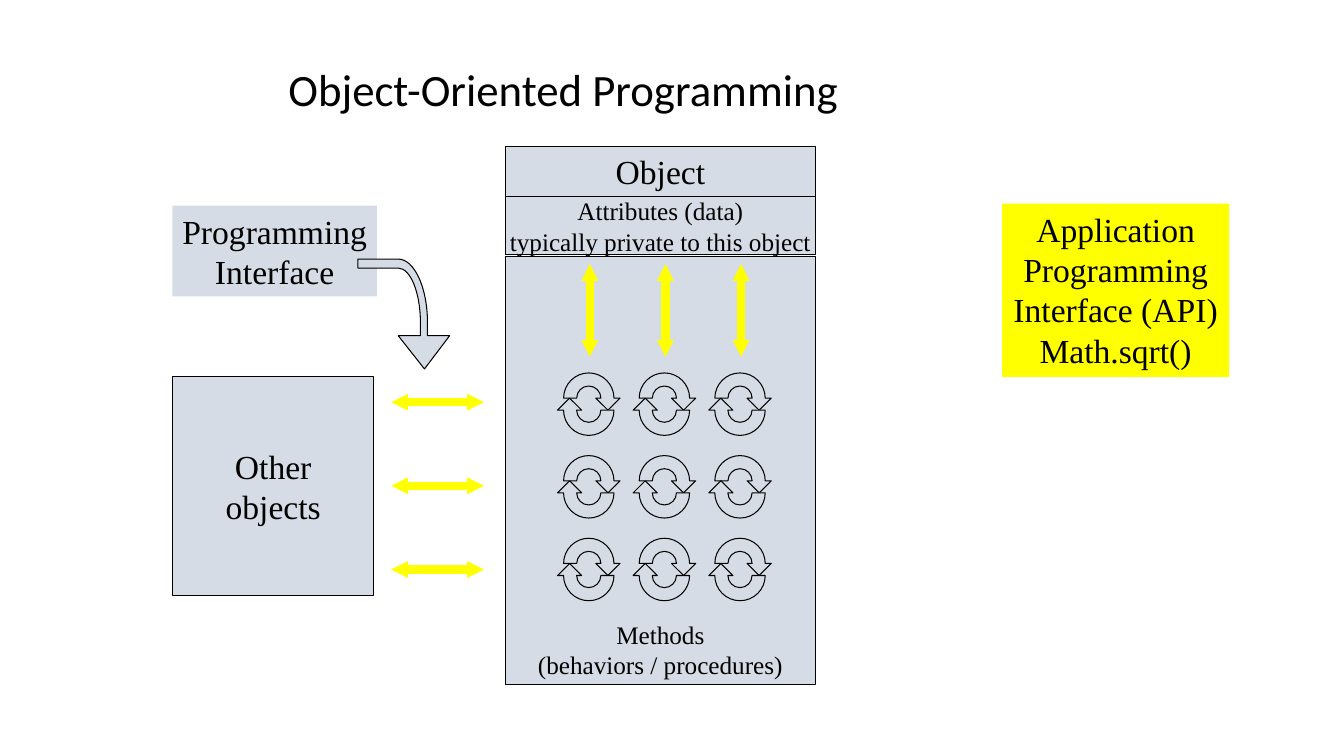
import math

from lxml import etree
from pptx import Presentation
from pptx.dml.color import RGBColor
from pptx.enum.shapes import MSO_CONNECTOR, MSO_SHAPE
from pptx.enum.text import MSO_ANCHOR, MSO_AUTO_SIZE, PP_ALIGN
from pptx.oxml.ns import qn
from pptx.util import Pt

RECT = MSO_SHAPE.RECTANGLE
STRAIGHT = MSO_CONNECTOR.STRAIGHT
TOP, MIDDLE, BOTTOM = MSO_ANCHOR.TOP, MSO_ANCHOR.MIDDLE, MSO_ANCHOR.BOTTOM
LEFT, CENTER = PP_ALIGN.LEFT, PP_ALIGN.CENTER
GROW, NO_FIT = MSO_AUTO_SIZE.SHAPE_TO_FIT_TEXT, MSO_AUTO_SIZE.NONE
EMU_PER_PX = 9144  # 100 px to the inch
BLACK, GREY, YELLOW = "000000", "D6DCE5", "FFFF00"


def px(n):
    return round(n * EMU_PER_PX)


def rgb(value):
    return RGBColor.from_string(value)


def lines(*points):
    """One straight step per point."""
    return [[point] for point in points]


def quarter(cx, cy, rx, ry, start, turn):
    """One curved step: a quarter ellipse from the start angle, turn is 1 or -1."""
    a, k = math.radians(start), 0.55 * turn
    cos, sin = math.cos(a), math.sin(a)
    unit = [(cos - k * sin, sin + k * cos),
            (k * cos - turn * sin, k * sin + turn * cos),
            (-turn * sin, turn * cos)]
    unit[1] = (unit[2][0] + abs(k) * cos, unit[2][1] + abs(k) * sin)
    return [[(cx + rx * x, cy + ry * y) for x, y in unit]]


class Deck:
    heading_font = "Calibri"
    body_font = "Times New Roman"
    thin, thick = Pt(0.75), Pt(6)

    def __init__(self, width, height):
        self.prs = Presentation()
        self.prs.slide_width, self.prs.slide_height = px(width), px(height)
        self.s = self.prs.slides.add_slide(self.prs.slide_layouts[5])

    def format_text(self, tf, size, font, align):
        for p in tf.paragraphs:
            p.alignment = align
            for r in p.runs:
                r.font.size, r.font.name = Pt(size), font
                r.font.color.rgb = rgb(BLACK)

    def paint(self, sp, fill, outlined=True):
        sp.shadow.inherit = False
        sp.fill.solid()
        sp.fill.fore_color.rgb = rgb(fill)
        if outlined:
            sp.line.color.rgb = rgb(BLACK)
            sp.line.width = self.thin
        else:
            sp.line.fill.background()

    def title(self, x, y, w, h, text):
        sp = self.s.shapes.title
        sp.left, sp.top, sp.width, sp.height = px(x), px(y), px(w), px(h)
        tf = sp.text_frame
        tf.text = text
        tf.auto_size, tf.vertical_anchor = NO_FIT, MIDDLE
        tf.paragraphs[0].line_spacing = 0.9
        self.format_text(tf, 32, self.heading_font, LEFT)

    def box(self, x, y, w, h, text, size=24, anchor=MIDDLE):
        sp = self.s.shapes.add_shape(RECT, px(x), px(y), px(w), px(h))
        self.paint(sp, GREY)
        tf = sp.text_frame
        tf.text = text
        tf.word_wrap, tf.vertical_anchor = False, anchor
        self.format_text(tf, size, self.body_font, CENTER)
        return sp

    def label(self, x, y, w, h, text, fill):
        sp = self.box(x, y, w, h, text, anchor=TOP)
        self.paint(sp, fill, outlined=False)
        sp.text_frame.auto_size = GROW

    def outline(self, start, steps):
        """Closed outline; a step of three points becomes a Bezier curve."""
        builder = self.s.shapes.build_freeform(px(start[0]), px(start[1]))
        builder.add_line_segments([(px(x), px(y)) for step in steps for x, y in step])
        sp = builder.convert_to_shape()
        outline = next(sp._element.iter(qn("a:path")))
        segments = iter(outline.findall(qn("a:lnTo")))
        for step in steps:
            first, *others = [next(segments) for _ in step]
            if others:
                first.addprevious(curve := etree.Element(qn("a:cubicBezTo")))
                for segment in (first, *others):
                    curve.append(segment[0])
                    outline.remove(segment)
        self.paint(sp, GREY)

    def cycle(self, cx, cy):
        """Two half rings with arrowheads, the lower one turned by 180 degrees."""
        half = (quarter(0, -6, 12, 12, 0, -1) + quarter(0, -6, 12, 12, -90, -1)
                + lines((-25, -6))
                + quarter(0, -6, 25, 25, -180, 1) + quarter(0, -6, 25, 25, -90, 1)
                + lines((31, -6), (19, 6), (7, -6), (12, -6)))
        for sign in (1, -1):
            steps = [[(cx + sign * x, cy + sign * y) for x, y in step] for step in half]
            self.outline(steps[-1][0], steps)

    def double_arrow(self, x1, y1, x2, y2):
        c = self.s.shapes.add_connector(STRAIGHT, px(x1), px(y1), px(x2), px(y2))
        c.line.color.rgb = rgb(YELLOW)
        c.line.width = self.thick
        ln = c.line._get_or_add_ln()
        for end in ("a:headEnd", "a:tailEnd"):
            etree.SubElement(ln, qn(end), type="triangle", w="sm", len="sm")
        etree.SubElement(c._element.spPr, qn("a:effectLst"))


def main():
    d = Deck(1333, 750)
    d.title(276, 37, 699, 109, "Object-Oriented Programming")

    # Object with its attributes and methods
    d.box(501, 145, 308, 50, "Object")
    d.box(501, 195, 308, 58, "Attributes (data)\vtypically private to this object", 18)
    d.box(501, 254, 308, 425, "Methods\v(behaviors / procedures)", 18, BOTTOM)

    # Method cycles, and data arrows above each column
    for col in range(3):
        for row in range(3):
            d.cycle(584 + 75 * col, 401 + 82 * row)
        x = 585 + 75 * col
        d.double_arrow(x, 354, x, 262)

    # API note
    d.label(994, 202, 225, 172,
            "Application\nProgramming\nInterface (API)\nMath.sqrt()", YELLOW)

    # Other objects and their calls
    for row in range(3):
        y = 399 + 83 * row
        d.double_arrow(480, y, 388, y)
    d.box(171, 374, 200, 217, "Other\nobjects")

    # Programming interface with a bent arrow
    d.label(171, 204, 203, 90, "Programming\nInterface", GREY)
    d.outline((421, 366),
              lines((446, 333), (424, 333), (424, 320))
              + quarter(395, 320, 29, 63, 0, -1)
              + lines((355, 257), (355, 266), (395, 266))
              + quarter(395, 320, 22, 54, -90, 1)
              + lines((417, 333), (395, 333), (421, 366)))

    d.prs.save("out.pptx")


if __name__ == "__main__":
    main()
